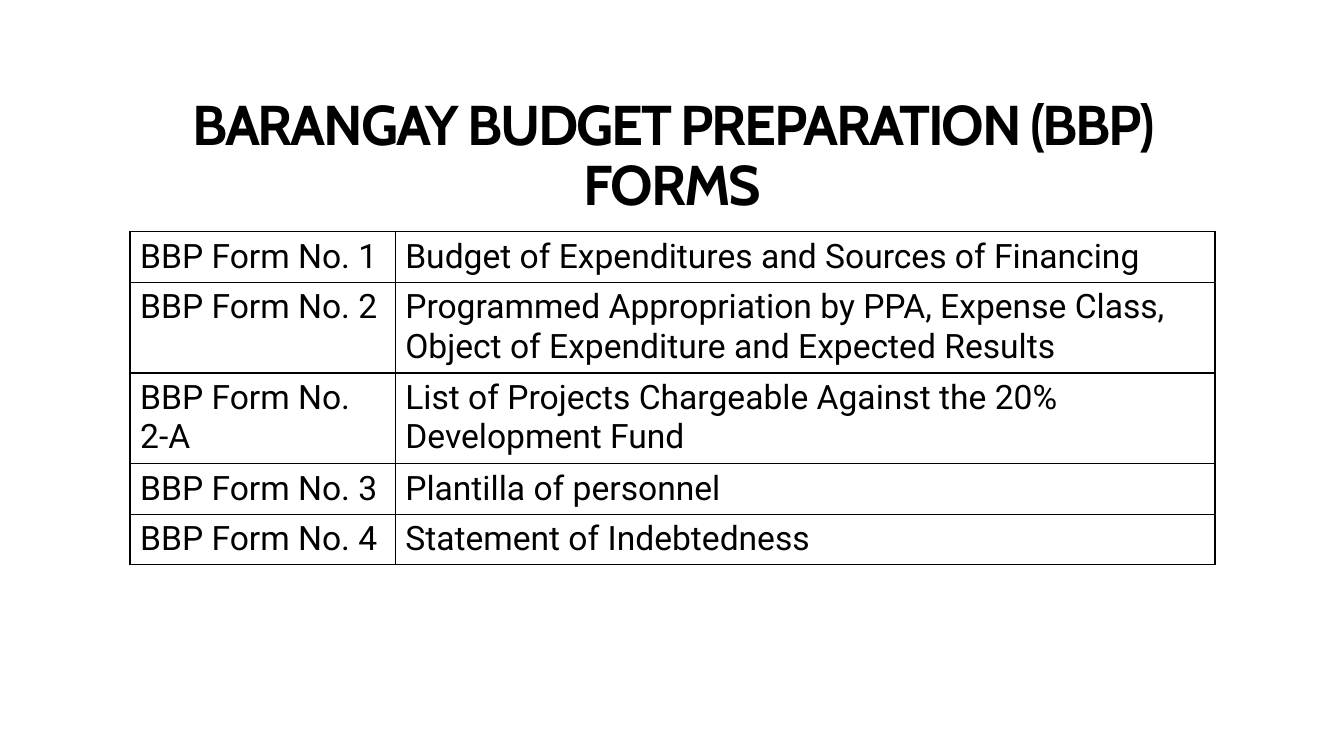
"""Build the slide that lists the barangay budget forms."""
import dataclasses

import lxml.etree
import pptx
import pptx.dml.color
import pptx.enum.text
import pptx.oxml.ns
import pptx.util

Inches = pptx.util.Inches
COLORS = {"ink": "000000", "paper": "FFFFFF"}
WIDTHS = (2.63, 8.13)
HEIGHT = 0.41


@dataclasses.dataclass
class Form:
    label: str
    title: str


@dataclasses.dataclass
class Style:
    face: str
    size: int
    bold: bool = False


HEAD = Style("Cabin", 40, True)
BODY = Style("Roboto", 24)
FORMS = [
    Form("BBP Form No. 1", "Budget of Expenditures and Sources of Financing"),
    Form("BBP Form No. 2", "Programmed Appropriation by PPA, Expense Class, "
         "Object of Expenditure and Expected Results"),
    Form("BBP Form No. 2-A", "List of Projects Chargeable Against the 20% Development Fund"),
    Form("BBP Form No. 3", "Plantilla of personnel"),
    Form("BBP Form No. 4", "Statement of Indebtedness"),
]


def color(name: str) -> pptx.dml.color.RGBColor:
    return pptx.dml.color.RGBColor.from_string(COLORS[name])


def write(frame, text: str, style: Style) -> None:
    frame.text = text
    for run in frame.paragraphs[0].runs:
        run.font.name = style.face
        run.font.size = pptx.util.Pt(style.size)
        run.font.bold = style.bold
        run.font.color.rgb = color("ink")


def border(cell) -> None:
    props = cell._tc.get_or_add_tcPr()
    qn = pptx.oxml.ns.qn
    for index, side in enumerate(("lnL", "lnR", "lnT", "lnB")):
        line = lxml.etree.Element(qn(f"a:{side}"), w=str(pptx.util.Pt(1)))
        fill = lxml.etree.SubElement(line, qn("a:solidFill"))
        lxml.etree.SubElement(fill, qn("a:srgbClr"), val=COLORS["ink"])
        props.insert(index, line)


def add_title(slide, text: str) -> None:
    box = slide.shapes.add_textbox(Inches(1.67), Inches(1.21), Inches(10), Inches(0.7))
    frame = box.text_frame
    frame.word_wrap = True
    frame.vertical_anchor = pptx.enum.text.MSO_ANCHOR.MIDDLE
    write(frame, text, HEAD)
    line = frame.paragraphs[0]
    line.alignment = pptx.enum.text.PP_ALIGN.CENTER
    line.line_spacing = 0.9
    line.runs[0].font._element.set("spc", "-150")


def add_forms(slide, forms: list[Form]) -> None:
    table = slide.shapes.add_table(
        len(forms), len(WIDTHS), Inches(1.29), Inches(2.3),
        Inches(sum(WIDTHS)), Inches(HEIGHT * len(forms))).table
    table.first_row = False
    table.horz_banding = False
    for column, width in zip(table.columns, WIDTHS):
        column.width = Inches(width)
    for row, form in zip(table.rows, forms):
        row.height = Inches(HEIGHT)
        for cell, text in zip(row.cells, (form.label, form.title)):
            write(cell.text_frame, text, BODY)
            cell.fill.solid()
            cell.fill.fore_color.rgb = color("paper")
            border(cell)


def main() -> None:
    deck = pptx.Presentation()
    deck.slide_width = Inches(13.33)
    deck.slide_height = Inches(7.5)
    slide = deck.slides.add_slide(deck.slide_layouts[6])
    add_title(slide, "BARANGAY BUDGET PREPARATION (BBP) FORMS")
    add_forms(slide, FORMS)
    deck.save("out.pptx")


if __name__ == "__main__":
    main()
